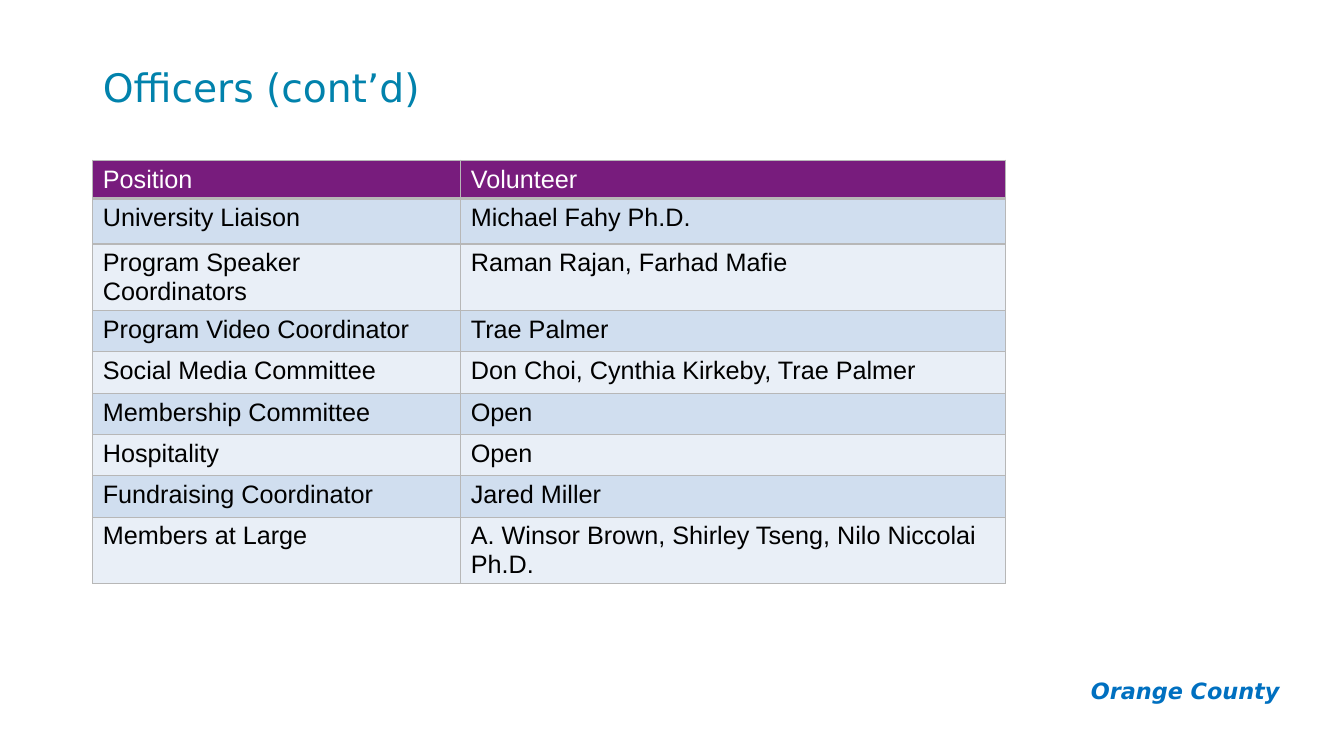
from lxml import etree
from pptx import Presentation
from pptx import util as u
from pptx.dml.color import RGBColor
from pptx.enum import text
from pptx.oxml import ns

TEAL = RGBColor(0x01, 0x82, 0xAC)
BLUE = RGBColor(0x00, 0x70, 0xC0)
PURPLE = RGBColor(0x78, 0x1C, 0x7D)
BAND_DARK = RGBColor(0xD0, 0xDE, 0xEF)
BAND_LIGHT = RGBColor(0xE9, 0xEF, 0xF7)
GRID_GREY = RGBColor(0xB7, 0xB7, 0xB7)
BLACK = RGBColor(0, 0, 0)
WHITE = RGBColor(0xFF, 0xFF, 0xFF)

LEFT = u.Inches(0.92)
COLUMN_WIDTHS = (3.65, 5.4)
ROW_HEIGHTS = (0.36, 0.45, 0.45) + (0.41,) * 6

OFFICERS = [
    ("Position", "Volunteer"),
    ("University Liaison", "Michael Fahy Ph.D."),
    ("Program Speaker Coordinators", "Raman Rajan, Farhad Mafie"),
    ("Program Video Coordinator", "Trae Palmer"),
    ("Social Media Committee", "Don Choi, Cynthia Kirkeby, Trae Palmer"),
    ("Membership Committee", "Open"),
    ("Hospitality", "Open"),
    ("Fundraising Coordinator", "Jared Miller"),
    ("Members at Large", "A. Winsor Brown, Shirley Tseng, Nilo Niccolai Ph.D."),
]


def write(frame, words, color, **font_values):
    frame.text = words
    font = frame.paragraphs[0].runs[0].font
    font.color.rgb = color
    for attribute, value in font_values.items():
        setattr(font, attribute, value)


def add_border(cell, side, points):
    """Draw one cell edge; call before the cell's fill is set."""
    edge = etree.SubElement(cell._tc.get_or_add_tcPr(), ns.qn(f"a:ln{side}"),
                            w=str(u.Pt(points)))
    fill = etree.SubElement(edge, ns.qn("a:solidFill"))
    etree.SubElement(fill, ns.qn("a:srgbClr"), val=str(GRID_GREY))


deck = Presentation()
deck.slide_width, deck.slide_height = u.Inches(13.33), u.Inches(7.5)
slide = deck.slides.add_slide(deck.slide_layouts[5])

title = slide.shapes.title
title.left, title.top = LEFT, u.Inches(0.4)
title.width, title.height = u.Inches(11.5), u.Inches(0.99)
write(title.text_frame, "Officers (cont’d)", TEAL, name="DejaVu Sans", size=u.Pt(28))
title.text_frame.vertical_anchor = text.MSO_ANCHOR.MIDDLE
heading = title.text_frame.paragraphs[0]
heading.alignment = text.PP_ALIGN.LEFT
heading.line_spacing = 0.9

officers = slide.shapes.add_table(
    len(OFFICERS), len(COLUMN_WIDTHS), LEFT, u.Inches(1.59),
    u.Inches(sum(COLUMN_WIDTHS)), u.Inches(sum(ROW_HEIGHTS))).table
for column, width in zip(officers.columns, COLUMN_WIDTHS):
    column.width = u.Inches(width)
for row, height in zip(officers.rows, ROW_HEIGHTS):
    row.height = u.Inches(height)

for r, entry in enumerate(OFFICERS):
    band = PURPLE if r == 0 else BAND_DARK if r % 2 else BAND_LIGHT
    for c, words in enumerate(entry):
        cell = officers.cell(r, c)
        for side in "LRTB":
            under_header = (r, side) in ((0, "B"), (1, "T"))
            add_border(cell, side, 3 if under_header else 1)
        cell.fill.solid()
        cell.fill.fore_color.rgb = band
        write(cell.text_frame, words, BLACK if r else WHITE,
              name="Arial", size=u.Pt(18), bold=False)

chapter = slide.shapes.add_textbox(
    u.Inches(10.51), u.Inches(6.62), u.Inches(2.28), u.Inches(0.47)).text_frame
chapter.word_wrap = True
for side in ("left", "right", "top", "bottom"):
    setattr(chapter, f"margin_{side}", u.Inches(0.1))
write(chapter, "Orange County", BLUE, name="DejaVu Sans", size=u.Pt(16),
      bold=True, italic=True)
chapter.paragraphs[0].alignment = text.PP_ALIGN.RIGHT

deck.save("out.pptx")
